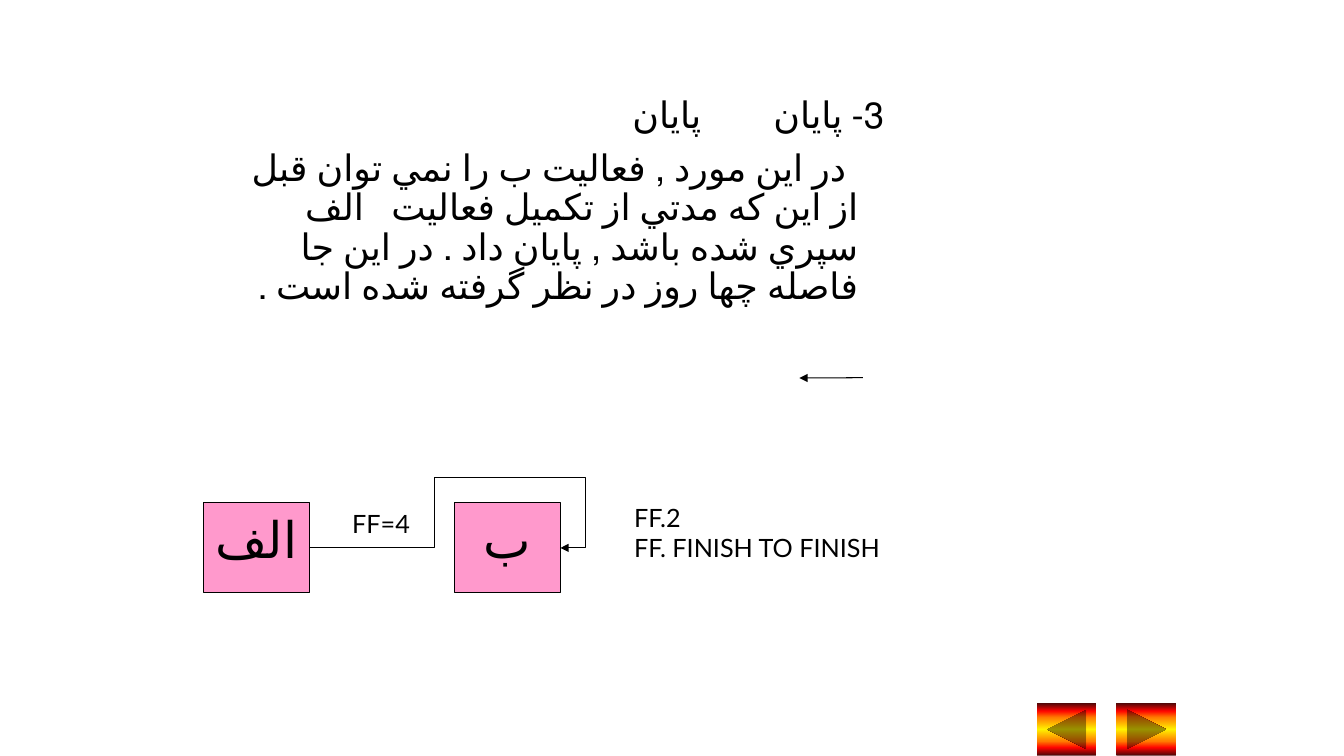
from lxml import etree
from pptx import Presentation
from pptx.dml.color import RGBColor
from pptx.enum.lang import MSO_LANGUAGE_ID
from pptx.enum.shapes import MSO_CONNECTOR, MSO_SHAPE
from pptx.enum.text import MSO_ANCHOR, MSO_AUTO_SIZE, PP_ALIGN
from pptx.oxml import parse_xml
from pptx.oxml.ns import nsdecls, qn
from pptx.util import Pt

BLACK = RGBColor(0x00, 0x00, 0x00)
PINK = RGBColor(0xFF, 0x99, 0xCC)
MAROON = RGBColor(0x4D, 0x08, 0x08)
RED = RGBColor(0xFF, 0x03, 0x00)
ORANGE = RGBColor(0xFF, 0x7A, 0x00)
YELLOW = RGBColor(0xFF, 0xF2, 0x00)
FIRE = [(0, MAROON), (15, RED), (27, ORANGE), (50, YELLOW),
        (73, ORANGE), (85, RED), (100, MAROON)]

HEADING = ("3- پايان", " ", "پايان")
EXPLANATION = ("در اين مورد , فعاليت ب را نمي توان قبل از اين که مدتي از تکميل "
               "فعاليت   الف  سپري شده باشد , پايان داد . در اين جا فاصله چها "
               "روز در نظر گرفته شده است .")


def format_runs(paragraph, font_name, size, language=MSO_LANGUAGE_ID.ENGLISH_US):
    """Give every run of a paragraph its font, size, language and black colour."""
    for run in paragraph.runs:
        run.font.name = font_name
        run.font.size = Pt(size)
        run.font.language_id = language
        run.font.color.rgb = BLACK


def add_body(slide, left, top, width, height):
    """Fill the body placeholder with the right-to-left heading and text."""
    body = slide.placeholders[1]
    body.left, body.top, body.width, body.height = map(Pt, (left, top, width, height))
    frame = body.text_frame
    frame.auto_size = MSO_AUTO_SIZE.NONE
    heading, explanation = frame.paragraphs[0], frame.add_paragraph()
    for part in HEADING:
        heading.add_run().text = part
    explanation.text = EXPLANATION
    for paragraph, margin, indent in ((heading, 0, 0), (explanation, 18, 8.5)):
        paragraph.alignment = PP_ALIGN.RIGHT
        paragraph.line_spacing = 0.9
        paragraph.space_before = Pt(10)
        format_runs(paragraph, "Calibri", 26, MSO_LANGUAGE_ID.FARSI)
        properties = paragraph._p.get_or_add_pPr()
        properties.set("rtl", "1")
        properties.set("marL", str(Pt(margin)))
        properties.set("indent", str(Pt(indent)))
        etree.SubElement(properties, qn("a:buNone"))
    heading.runs[1]._r.get_or_add_rPr().set("spc", "4500")


def add_arrow(shapes, kind, start, end):
    """Add a thin black connector with a triangle at its end."""
    arrow = shapes.add_connector(kind, *map(Pt, start + end))
    arrow.line.color.rgb = BLACK
    arrow.line.width = Pt(0.75)
    etree.SubElement(arrow.line._get_or_add_ln(), qn("a:tailEnd"), type="triangle")
    etree.SubElement(arrow._element.spPr, qn("a:effectLst"))
    return arrow


def add_activity(shapes, name, left, top, width, height):
    """Add a pink activity box with its name."""
    box = shapes.add_shape(MSO_SHAPE.RECTANGLE, *map(Pt, (left, top, width, height)))
    box.shadow.inherit = False
    box.fill.solid()
    box.fill.fore_color.rgb = PINK
    box.line.color.rgb = BLACK
    box.line.width = Pt(0.75)
    box.text_frame.text = name
    box.text_frame.vertical_anchor = MSO_ANCHOR.TOP
    paragraph = box.text_frame.paragraphs[0]
    paragraph.alignment = PP_ALIGN.CENTER
    paragraph._p.get_or_add_pPr().set("rtl", "1")
    format_runs(paragraph, "Times New Roman", 36, MSO_LANGUAGE_ID.FARSI)


def add_label(shapes, text, alignment, left, top, width, height):
    """Add an unwrapped, vertically centred label."""
    frame = shapes.add_textbox(*map(Pt, (left, top, width, height))).text_frame
    frame.word_wrap = False
    frame.vertical_anchor = MSO_ANCHOR.MIDDLE
    frame.text = text
    for paragraph in frame.paragraphs:
        paragraph.alignment = alignment
        format_runs(paragraph, "Lato", 18)


def add_bent_arrow(shapes, start_x, end_x, y, rise, overshoot):
    """Add an arrow that climbs over a box and enters it from the far side."""
    depth = 0.12
    width = end_x - start_x
    arrow = add_arrow(shapes, MSO_CONNECTOR.ELBOW, (start_x, y), (end_x, y + depth))
    geometry = arrow._element.spPr.find(qn("a:prstGeom"))
    geometry.set("prst", "bentConnector5")
    ratios = (0.5, -rise / depth, 1 + overshoot / width)
    for number, ratio in enumerate(ratios, 1):
        etree.SubElement(geometry.find(qn("a:avLst")), qn("a:gd"),
                         name=f"adj{number}", fmla=f"val {round(ratio * 100000)}")


def add_diagram(slide, left, top):
    """Draw the finish-to-finish relation between two activities."""
    shapes = slide.shapes.add_group_shape().shapes
    width, height, step = 75.6, 64, 179.3
    for index, name in enumerate(("الف", "ب")):
        add_activity(shapes, name, left + index * step, top, width, height)
    add_label(shapes, "FF=4", PP_ALIGN.CENTER, left + 95.5, top - 10, 62.6, 49)
    add_label(shapes, "FF.2\nFF. FINISH TO FINISH", PP_ALIGN.LEFT,
              left + 300.4, top - 27.2, 226.8, 96.5)
    add_bent_arrow(shapes, left + width, left + step + width, top + height / 2, 53, 18)


def add_buttons(slide, left, top, width, height, pitch):
    """Add the back and forward buttons with their fiery gradient."""
    shapes = slide.shapes.add_group_shape().shapes
    stops = "".join(f'<a:gs pos="{position * 1000}"><a:srgbClr val="{color}"/></a:gs>'
                    for position, color in FIRE)
    kinds = (MSO_SHAPE.ACTION_BUTTON_BACK_OR_PREVIOUS,
             MSO_SHAPE.ACTION_BUTTON_FORWARD_OR_NEXT)
    for index, kind in enumerate(kinds):
        button = shapes.add_shape(
            kind, *map(Pt, (left + index * pitch, top, width, height)))
        button.shadow.inherit = False
        button.line.fill.background()
        button.fill.gradient()
        button.fill.gradient_angle = 270
        gradient = button._element.spPr.find(qn("a:gradFill"))
        gradient.replace(gradient.find(qn("a:gsLst")),
                         parse_xml(f'<a:gsLst {nsdecls("a")}>{stops}</a:gsLst>'))


def main():
    """Build the slide and save it."""
    presentation = Presentation()
    presentation.slide_width, presentation.slide_height = Pt(960), Pt(540)
    slide = presentation.slides.add_slide(presentation.slide_layouts[1])
    title = slide.shapes.title._element
    title.getparent().remove(title)
    add_body(slide, 162.7, 65.5, 476, 175.7)
    add_arrow(slide.shapes, MSO_CONNECTOR.STRAIGHT, (616.3, 269.8), (571, 270))
    add_diagram(slide, 145.4, 359.3)
    add_buttons(slide, 740.9, 502.3, 42.5, 37.4, 56.6)
    presentation.save("out.pptx")


if __name__ == "__main__":
    main()
